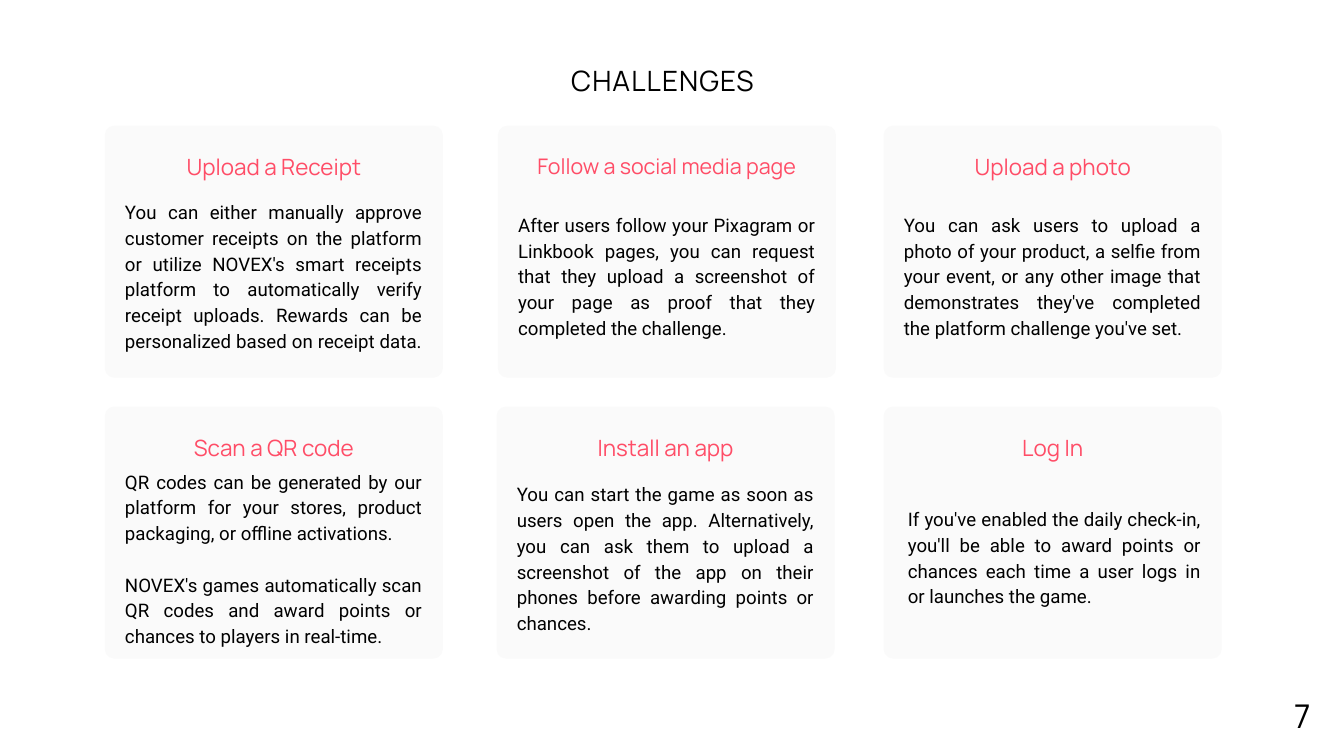
from dataclasses import dataclass

from pptx import Presentation
from pptx.dml.color import RGBColor
from pptx.enum.shapes import MSO_SHAPE
from pptx.enum.text import MSO_ANCHOR, MSO_AUTO_SIZE, PP_ALIGN
from pptx.util import Inches, Pt

CARD_WIDTH, CARD_HEIGHT, CARD_RADIUS = 5.03, 3.75, 0.14
HEADING_WIDTH = 4.65
BODY_RIGHT = 4.72
TOP_ROW, BOTTOM_ROW = 1.87, 6.05


@dataclass
class Challenge:
    left: float
    top: float
    heading: str
    body_top: float
    body_height: float
    texts: list
    heading_size: int = 24
    body_width: float = 4.42


CHALLENGES = [
    Challenge(1.56, TOP_ROW, "Upload a Receipt", 2.94, 2.25, [
        "You can either manually approve customer receipts on the platform or utilize "
        "NOVEX's smart receipts platform to automatically verify receipt uploads. "
        "Rewards can be personalized based on receipt data. "]),
    Challenge(7.41, TOP_ROW, "Follow a social media page", 3.13, 1.88, [
        "After users follow your Pixagram or Linkbook pages, you can request that they "
        "upload a screenshot of your page as proof that they completed the challenge. "],
        heading_size=23),
    Challenge(13.15, TOP_ROW, "Upload a photo", 3.13, 1.88, [
        "You can ask users to upload a photo of your product, a selfie from your event, "
        "or any other image that demonstrates they've completed the platform challenge "
        "you've set. "]),
    Challenge(1.56, BOTTOM_ROW, "Scan a QR code", 6.95, 2.63, [
        "QR codes can be generated by our platform for your stores, product packaging, "
        "or offline activations. ",
        "NOVEX's games automatically scan QR codes and award points or chances to "
        "players in real-time. "]),
    Challenge(7.39, BOTTOM_ROW, "Install an app", 7.14, 2.25, [
        "You can start the game as soon as users open the app. Alternatively, you can "
        "ask them to upload a screenshot of the app on their phones before awarding "
        "points or chances. "]),
    Challenge(13.15, BOTTOM_ROW, "Log In", 7.51, 1.5, [
        "If you've enabled the daily check-in, you'll be able to award points or chances "
        "each time a user logs in or launches the game."], body_width=4.36),
]


def color(value):
    return RGBColor.from_string(value)


def place(shape, left, top, width, height):
    shape.left, shape.top = Inches(left), Inches(top)
    shape.width, shape.height = Inches(width), Inches(height)


def fill_text(shape, texts, font_name, size, line_height, alignment, text_color="000000", inset=0):
    frame = shape.text_frame
    frame.word_wrap = True
    frame.auto_size = MSO_AUTO_SIZE.NONE
    frame.margin_left = frame.margin_right = Inches(inset)
    frame.margin_top = frame.margin_bottom = Inches(inset)
    frame.text = "\n".join(texts)
    for index, paragraph in enumerate(frame.paragraphs):
        paragraph.alignment = alignment
        paragraph.line_spacing = Pt(line_height)
        paragraph.space_before = Pt(line_height if index else 0)
        paragraph.font.name = font_name
        paragraph.font.size = Pt(size)
        paragraph.font.color.rgb = color(text_color)


def add_text(slide, left, top, width, height, texts, *style):
    box = slide.shapes.add_textbox(Inches(left), Inches(top), Inches(width), Inches(height))
    fill_text(box, texts, *style)


def add_title(slide, text):
    title = slide.shapes.title
    place(title, 6.58, -0.35, 6.56, 3.02)
    fill_text(title, [text], "Manrope", 30, 42, PP_ALIGN.CENTER, inset=0.06)
    title.text_frame.vertical_anchor = MSO_ANCHOR.MIDDLE
    run = title.text_frame.paragraphs[0].runs[0]
    run.font._element.set("spc", "120")


def add_card(slide, left, top):
    card = slide.shapes.add_shape(
        MSO_SHAPE.ROUNDED_RECTANGLE,
        Inches(left), Inches(top), Inches(CARD_WIDTH), Inches(CARD_HEIGHT))
    card.adjustments[0] = CARD_RADIUS / CARD_HEIGHT
    card.shadow.inherit = False
    card.fill.solid()
    card.fill.fore_color.rgb = color("FAFAFA")
    card.line.fill.background()


def add_challenge(slide, challenge):
    add_card(slide, challenge.left, challenge.top)
    heading_left = challenge.left + (CARD_WIDTH - HEADING_WIDTH) / 2
    size = challenge.heading_size
    add_text(slide, heading_left, challenge.top + 0.41, HEADING_WIDTH, 0.42,
             [challenge.heading], "Manrope", size, size * 1.2, PP_ALIGN.CENTER, "FF4D67")
    body_left = challenge.left + BODY_RIGHT - challenge.body_width
    add_text(slide, body_left, challenge.body_top, challenge.body_width, challenge.body_height,
             challenge.texts, "Roboto", 20, 27.6, PP_ALIGN.JUSTIFY)


def main():
    presentation = Presentation()
    presentation.slide_width, presentation.slide_height = Inches(20), Inches(11.25)
    slide = presentation.slides.add_slide(presentation.slide_layouts[5])
    add_title(slide, "CHALLENGES")
    for challenge in CHALLENGES:
        add_challenge(slide, challenge)
    add_text(slide, 19.26, 10.02, 0.27, 0.87, ["7"], "Manrope", 35, 66.5, PP_ALIGN.LEFT)
    presentation.save("out.pptx")


if __name__ == "__main__":
    main()
